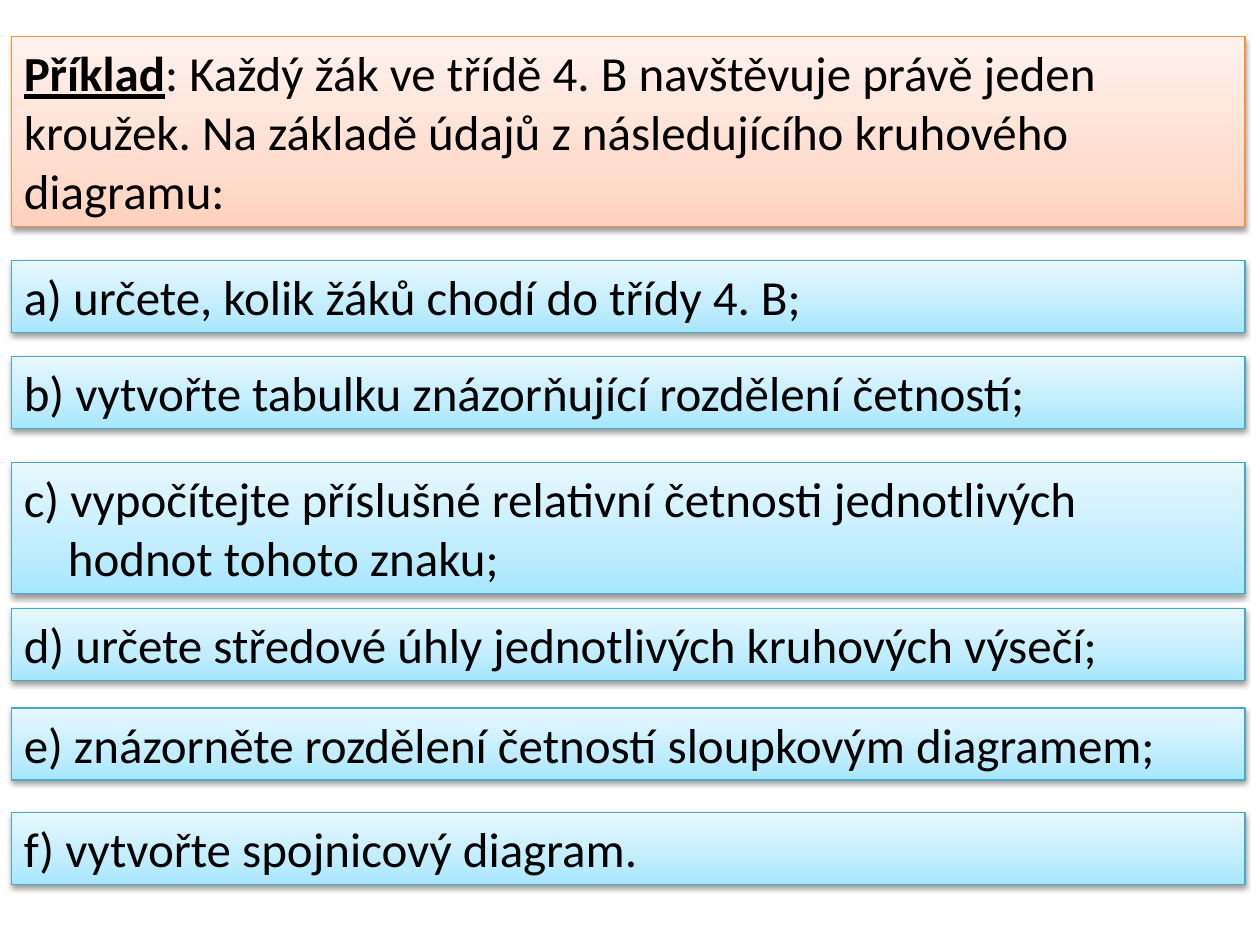
from copy import deepcopy

from lxml.etree import SubElement
from pptx import Presentation
from pptx.dml.color import RGBColor
from pptx.enum.shapes import MSO_SHAPE
from pptx.enum.text import MSO_ANCHOR, MSO_AUTO_SIZE, PP_ALIGN
from pptx.oxml.ns import qn
from pptx.util import Inches, Pt

BLACK = RGBColor(0x00, 0x00, 0x00)
ORANGE_LINE = RGBColor(0xF6, 0x92, 0x40)
ORANGE_STOPS = [RGBColor(0xFF, 0xD2, 0xBD), RGBColor(0xFF, 0xDE, 0xD0), RGBColor(0xFF, 0xF2, 0xED)]
BLUE_LINE = RGBColor(0x46, 0xAA, 0xC5)
BLUE_STOPS = [RGBColor(0xA7, 0xE6, 0xFF), RGBColor(0xC1, 0xED, 0xFF), RGBColor(0xE7, 0xF8, 0xFF)]
STOP_POSITIONS = [0, 0.35, 1]


def add_shadow(panel):
    panel.shadow.inherit = False
    effects = panel._element.spPr.find(qn("a:effectLst"))
    shadow = SubElement(effects, qn("a:outerShdw"), blurRad=str(Pt(3.1)),
                        dist=str(Pt(1.6)), dir="5400000", rotWithShape="0")
    color = SubElement(shadow, qn("a:srgbClr"), val=str(BLACK))
    SubElement(color, qn("a:alpha"), val="38000")


def add_panel(top, height, lines, stops, line_color):
    panel = slide.shapes.add_shape(MSO_SHAPE.RECTANGLE, Inches(0.09), Inches(top),
                                   Inches(9.79), Inches(height))
    panel.line.color.rgb = line_color
    panel.line.width = Pt(0.75)
    add_shadow(panel)

    # Three-stop gradient, lightest at the top
    panel.fill.gradient()
    panel.fill.gradient_angle = 90
    stop_list = panel._element.spPr.find(qn("a:gradFill")).find(qn("a:gsLst"))
    stop_list.append(deepcopy(stop_list[0]))
    for stop, position, color in zip(panel.fill.gradient_stops, STOP_POSITIONS, stops):
        stop.position = position
        stop.color.rgb = color

    frame = panel.text_frame
    frame.word_wrap = True
    frame.auto_size = MSO_AUTO_SIZE.SHAPE_TO_FIT_TEXT
    frame.vertical_anchor = MSO_ANCHOR.TOP
    frame.text = "\n".join(lines)
    for paragraph in frame.paragraphs:
        paragraph.alignment = PP_ALIGN.LEFT
        paragraph.font.name = "Calibri"
        paragraph.font.size = Pt(28)
        paragraph.font.color.rgb = BLACK
    return frame.paragraphs


prs = Presentation()
prs.slide_width = Inches(10)
prs.slide_height = Inches(7.5)
slide = prs.slides.add_slide(prs.slide_layouts[6])

# Problem statement
statement = add_panel(0.29, 1.51, [
    "Příklad",
    "kroužek. Na základě údajů z následujícího kruhového diagramu:",
], ORANGE_STOPS, ORANGE_LINE)
label = statement[0].runs[0]
label.font.bold = True
label.font.underline = True
statement[0].add_run().text = ": Každý žák ve třídě 4. B navštěvuje právě jeden"

# Tasks a) to f)
tasks = [
    (2.07, 0.57, ["a) určete, kolik žáků chodí do třídy 4. B;"]),
    (2.83, 0.57, ["b) vytvořte tabulku znázorňující rozdělení četností;"]),
    (3.67, 1.04, ["c) vypočítejte příslušné relativní četnosti jednotlivých",
                  "hodnot tohoto znaku;"]),
    (4.83, 0.57, ["d) určete středové úhly jednotlivých kruhových výsečí;"]),
    (5.62, 0.57, ["e) znázorněte rozdělení četností sloupkovým diagramem;"]),
    (6.45, 0.57, ["f) vytvořte spojnicový diagram."]),
]
for top, height, lines in tasks:
    task = add_panel(top, height, lines, BLUE_STOPS, BLUE_LINE)
    # Continuation lines are indented under the task text
    for continuation in task[1:]:
        continuation._p.get_or_add_pPr().set("marL", str(Inches(0.35)))

prs.save("out.pptx")
